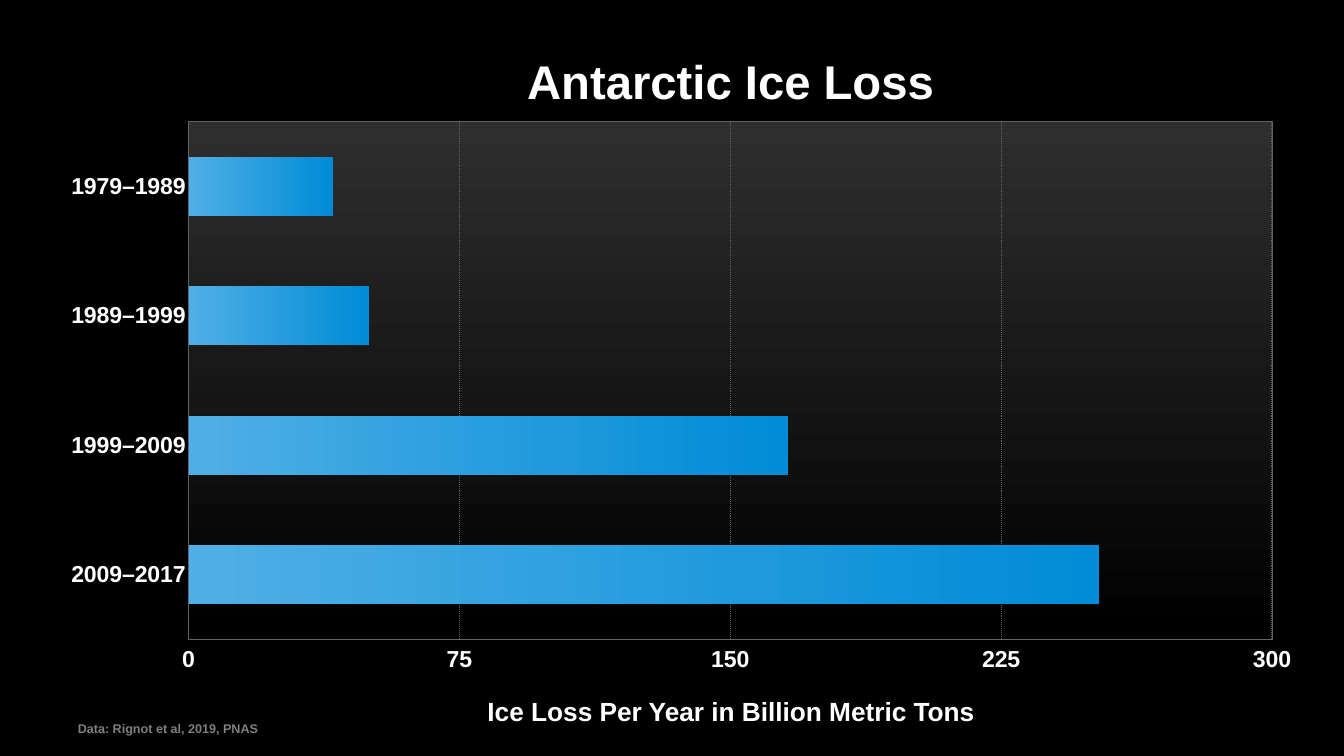
from dataclasses import dataclass

from lxml import etree
from pptx import Presentation
from pptx import util as u
from pptx.chart.data import CategoryChartData
from pptx.dml.color import RGBColor
from pptx.enum import chart as charts, dml, text
from pptx.oxml import parse_xml
from pptx.oxml.ns import nsdecls, qn


@dataclass(frozen=True)
class Theme:
    font: str = "Arial"
    background: str = "000000"
    ink: str = "FFFFFF"
    rule: str = "5D6464"
    plot_fade: tuple = ("2E2E2E", "000000")
    bar_fade: tuple = ("50AFE6", "008CD6")
    title_size: int = 45
    caption_size: int = 25
    axis_size: int = 22
    source_size: int = 12


THEME = Theme()
WIDTH, HEIGHT = 17.78, 10
ICE_LOSS = {"1979–1989": 40, "1989–1999": 50, "1999–2009": 166, "2009–2017": 252}


def share(left, top, width, height):
    """Turn percentages of the slide's size into lengths."""
    return [u.Inches(part * side / 100) for part, side in
            zip((left, top, width, height), (WIDTH, HEIGHT, WIDTH, HEIGHT))]


def set_font(font, size):
    font.name, font.size, font.bold = THEME.font, u.Pt(size), True
    font.color.rgb = RGBColor.from_string(THEME.ink)


def add_text(slide, box, content, *, size, align=text.PP_ALIGN.LEFT, inset=0.04,
             wrap=False, line_height=None, opacity=100):
    shape = slide.shapes.add_textbox(*box)
    frame = shape.text_frame
    frame.word_wrap = wrap
    frame.auto_size = text.MSO_AUTO_SIZE.NONE if wrap else text.MSO_AUTO_SIZE.SHAPE_TO_FIT_TEXT
    frame.vertical_anchor = text.MSO_ANCHOR.MIDDLE
    frame.margin_left = frame.margin_right = u.Inches(inset)
    frame.margin_top = frame.margin_bottom = u.Inches(inset)
    paragraph = frame.paragraphs[0]
    paragraph.alignment = align
    if line_height:
        paragraph.line_spacing = u.Pt(line_height)
    run = paragraph.add_run()
    run.text = content
    set_font(run.font, size)
    if opacity < 100:
        color = next(run.font._element.iter(qn("a:srgbClr")))
        etree.SubElement(color, qn("a:alpha"), val=str(opacity * 1000))


def gradient(colors, angle):
    """Two-colour fade as XML, its angle clockwise in degrees."""
    stops = "".join(f'<a:gs pos="{position}"><a:srgbClr val="{color}"/></a:gs>'
                    for position, color in zip((0, 100000), colors))
    return parse_xml(f'<a:gradFill {nsdecls("a")} rotWithShape="1"><a:gsLst>{stops}</a:gsLst>'
                     f'<a:lin ang="{angle * 60000}" scaled="0"/></a:gradFill>')


def set_line(line):
    line.color.rgb = RGBColor.from_string(THEME.rule)
    line.width = u.Pt(1)


def style_axis(axis):
    axis.major_tick_mark = axis.minor_tick_mark = charts.XL_TICK_MARK.NONE
    set_font(axis.tick_labels.font, THEME.axis_size)
    set_line(axis.format.line)


def style_plot_area(chart, x, y, w, h):
    """Fix the inner plot box, in shares of the chart, and fill and frame it."""
    area = chart._chartSpace.chart.plotArea
    for old in area.findall(qn("c:layout")):
        area.remove(old)
    places = "".join(f'<c:{name} val="{value}"/>' for name, value in
                     dict(xMode="edge", yMode="edge", x=x, y=y, w=w, h=h).items())
    area.insert(0, parse_xml(
        f'<c:layout {nsdecls("c")}><c:manualLayout><c:layoutTarget val="inner"/>'
        f'{places}</c:manualLayout></c:layout>'))
    properties = parse_xml(
        f'<c:spPr {nsdecls("c", "a")}><a:ln w="6350"><a:solidFill>'
        f'<a:srgbClr val="{THEME.rule}"/></a:solidFill></a:ln></c:spPr>')
    properties.insert(0, gradient(THEME.plot_fade, 90))
    area.append(properties)


def add_bar_chart(slide, box):
    data = CategoryChartData()
    data.categories = list(ICE_LOSS)
    data.add_series("Series 1", list(ICE_LOSS.values()))
    chart = slide.shapes.add_chart(charts.XL_CHART_TYPE.BAR_CLUSTERED, *box, data).chart
    chart.has_legend = chart.has_title = False
    set_font(chart.font, THEME.axis_size)

    plot = chart.plots[0]
    plot.gap_width, plot.overlap, plot.vary_by_categories = 120, -20, False
    plot.series[0]._element.get_or_add_spPr().append(gradient(THEME.bar_fade, 0))

    periods, tons = chart.category_axis, chart.value_axis
    style_axis(periods)
    style_axis(tons)
    periods.reverse_order = True
    tons.tick_label_position = charts.XL_TICK_LABEL_POSITION.HIGH
    tons.minimum_scale, tons.maximum_scale, tons.major_unit = 0, 300, 75
    tons.has_major_gridlines = True
    grid = tons.major_gridlines.format.line
    set_line(grid)
    grid.dash_style = dml.MSO_LINE.ROUND_DOT
    style_plot_area(chart, 0.109, 0.045, 0.875, 0.878)


def add_ice_loss_slide(presentation):
    slide = presentation.slides.add_slide(presentation.slide_layouts[6])
    slide.background.fill.solid()
    slide.background.fill.fore_color.rgb = RGBColor.from_string(THEME.background)
    center = text.PP_ALIGN.CENTER
    add_text(slide, share(14.06, 6.5, 80.6, 8.3), "Antarctic Ice Loss",
             size=THEME.title_size, align=center, wrap=True, line_height=54)
    add_text(slide, share(5.62, 95, 14.17, 2.6), "Data: Rignot et al, 2019, PNAS",
             size=THEME.source_size, inset=0.03, opacity=50)
    add_bar_chart(slide, share(3.99, 12.6, 92.13, 78))
    add_text(slide, share(35.88, 91.5, 37.01, 5), "Ice Loss Per Year in Billion Metric Tons",
             size=THEME.caption_size, align=center, inset=0.06)


def main():
    presentation = Presentation()
    presentation.slide_width, presentation.slide_height = u.Inches(WIDTH), u.Inches(HEIGHT)
    add_ice_loss_slide(presentation)
    presentation.save("out.pptx")


if __name__ == "__main__":
    main()
